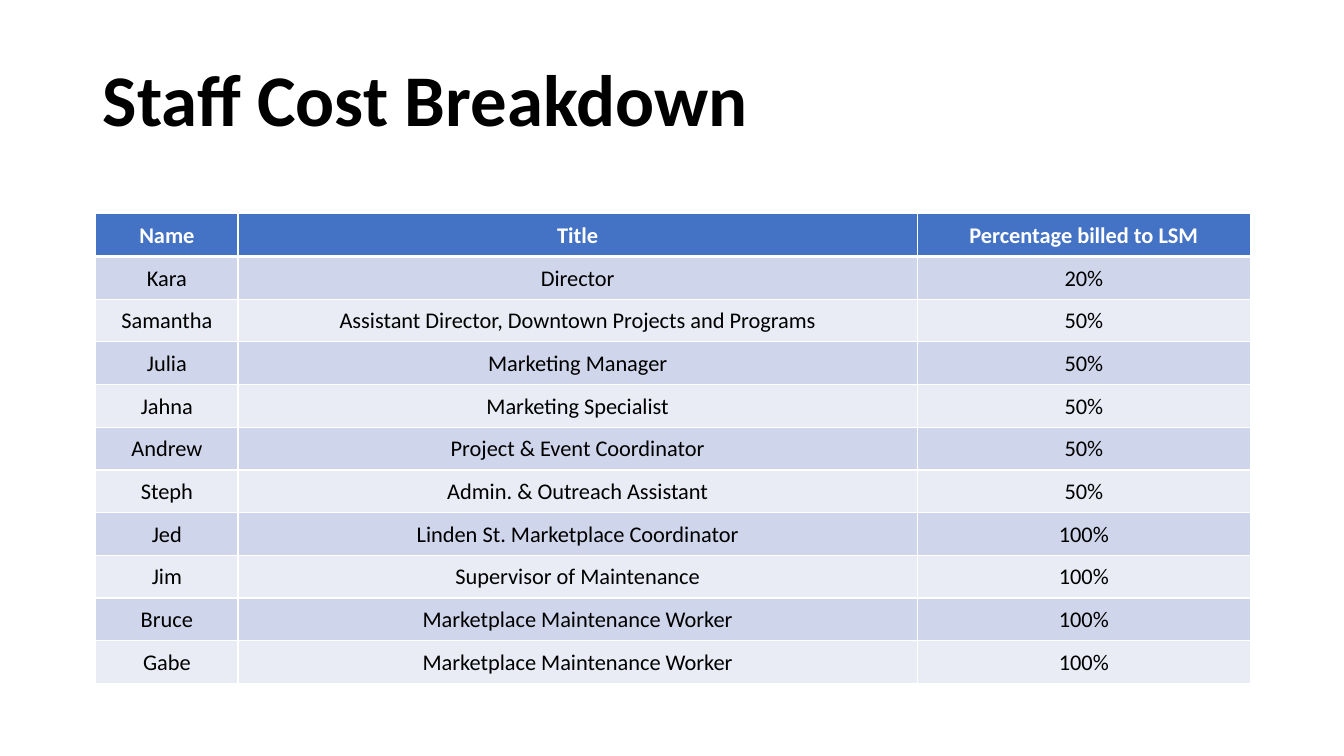
from lxml.etree import SubElement
from pptx import Presentation
from pptx.dml.color import RGBColor
from pptx.enum.text import MSO_ANCHOR, PP_ALIGN
from pptx.oxml.ns import qn
from pptx.util import Inches, Pt

BLACK = RGBColor(0x00, 0x00, 0x00)
WHITE = RGBColor(0xFF, 0xFF, 0xFF)
BLUE = RGBColor(0x44, 0x72, 0xC4)
BAND_DARK = RGBColor(0xCF, 0xD5, 0xEA)
BAND_LIGHT = RGBColor(0xE9, 0xEB, 0xF5)

COLUMN_WIDTHS = [1.41, 6.74, 3.3]
ROW_HEIGHT = 4.66 / 11
STAFF = [
    ("Name", "Title", "Percentage billed to LSM"),
    ("Kara", "Director", "20%"),
    ("Samantha", "Assistant Director, Downtown Projects and Programs", "50%"),
    ("Julia", "Marketing Manager", "50%"),
    ("Jahna", "Marketing Specialist", "50%"),
    ("Andrew", "Project & Event Coordinator", "50%"),
    ("Steph", "Admin. & Outreach Assistant", "50%"),
    ("Jed", "Linden St. Marketplace Coordinator", "100%"),
    ("Jim", "Supervisor of Maintenance", "100%"),
    ("Bruce", "Marketplace Maintenance Worker", "100%"),
    ("Gabe", "Marketplace Maintenance Worker", "100%"),
]


class SlideBuilder:
    font = "Calibri"
    title_size = Pt(52)
    table_size = Pt(16)

    def __init__(self, page):
        self.page = page

    def style_text(self, para, size, color, bold):
        for span in para.runs:
            span.font.name = self.font
            span.font.size = size
            span.font.bold = bold
            span.font.color.rgb = color

    def title(self, text, left, top, width, height):
        box = self.page.shapes.title
        box.left, box.top = Inches(left), Inches(top)
        box.width, box.height = Inches(width), Inches(height)
        frame = box.text_frame
        frame.text = text
        frame.word_wrap = True
        frame.vertical_anchor = MSO_ANCHOR.MIDDLE
        para = frame.paragraphs[0]
        para.alignment = PP_ALIGN.LEFT
        para.line_spacing = 0.9
        self.style_text(para, self.title_size, BLACK, True)

    def border(self, cell, side, points):
        properties = cell._tc.get_or_add_tcPr()
        line = SubElement(properties, qn(f"a:ln{side}"), w=str(Pt(points)))
        fill = SubElement(line, qn("a:solidFill"))
        SubElement(fill, qn("a:srgbClr"), val=str(WHITE))

    def cell(self, cell, text, row):
        """Fill one cell; row 0 is the header, the others are banded."""
        header = row == 0
        for side in "LRTB":
            under_header = (row, side) in ((0, "B"), (1, "T"))
            self.border(cell, side, 3 if under_header else 1)
        cell.fill.solid()
        band = BAND_DARK if row % 2 else BAND_LIGHT
        cell.fill.fore_color.rgb = BLUE if header else band
        cell.margin_left = cell.margin_right = cell.margin_top = Inches(0.02)
        cell.margin_bottom = Inches(0.07)
        cell.vertical_anchor = MSO_ANCHOR.BOTTOM
        cell.text = text
        para = cell.text_frame.paragraphs[0]
        para.alignment = PP_ALIGN.CENTER
        self.style_text(para, self.table_size, WHITE if header else BLACK, header)

    def table(self, rows, left, top, widths, row_height):
        table = self.page.shapes.add_table(
            len(rows), len(widths), Inches(left), Inches(top),
            Inches(sum(widths)), Inches(row_height * len(rows))).table
        for column, width in zip(table.columns, widths):
            column.width = Inches(width)
        for row, texts in enumerate(rows):
            table.rows[row].height = Inches(row_height)
            for column, text in enumerate(texts):
                self.cell(table.cell(row, column), text, row)


def main():
    deck = Presentation()
    deck.slide_width, deck.slide_height = Inches(13.33), Inches(7.5)
    builder = SlideBuilder(deck.slides.add_slide(deck.slide_layouts[5]))
    builder.title("Staff Cost Breakdown", 0.92, 0.2, 11.5, 1.65)
    builder.table(STAFF, 0.95, 2.12, COLUMN_WIDTHS, ROW_HEIGHT)
    deck.save("out.pptx")


if __name__ == "__main__":
    main()
